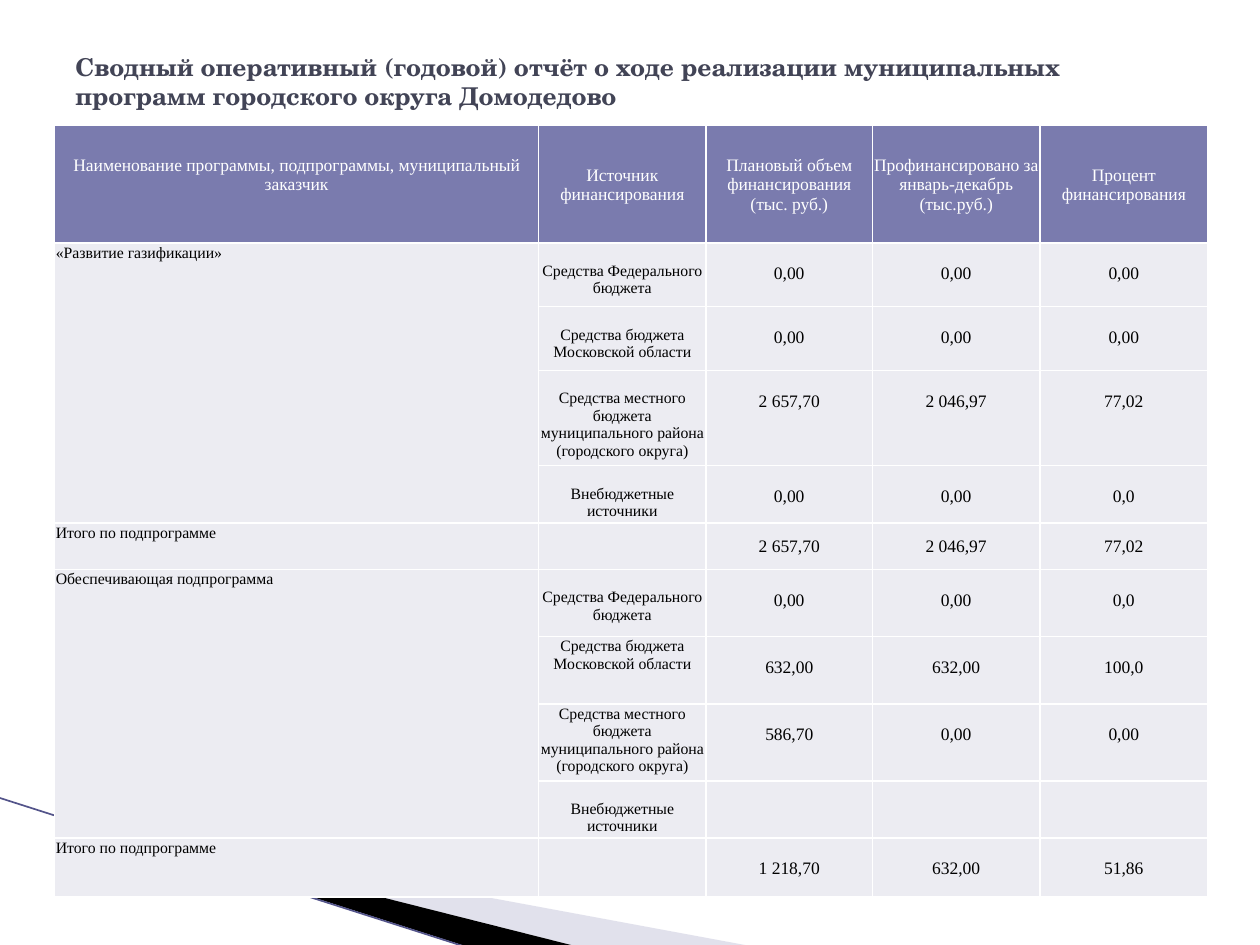
from itertools import product

from lxml.etree import SubElement
from pptx import Presentation
from pptx.dml.color import RGBColor as RGB
from pptx.enum.shapes import MSO_CONNECTOR as CONN
from pptx.enum.text import MSO_ANCHOR as ANCHOR, PP_ALIGN as ALIGN
from pptx.oxml import parse_xml
from pptx.oxml.ns import nsdecls, qn
from pptx.util import Pt

THEME = {
    "head_fill": "7A7BAE", "body_fill": "ECECF2", "border": "FFFFFF",
    "wedge": "B6B6D1", "band": "000000", "line": "53548A",
    "title": dict(name="TeX Gyre Schola", size=14, bold=True, color="424456"),
    "head": dict(name="Times New Roman", size=10, bold=False, color="FFFFFF"),
    "label": dict(name="Times New Roman", size=9, bold=False, color="000000"),
    "value": dict(name="Times New Roman", size=10, bold=False, color="000000"),
}
TITLE = ("Сводный оперативный (годовой) отчёт о ходе реализации "
         "муниципальных программ городского округа Домодедово")
HEADERS = ["Наименование программы, подпрограммы, муниципальный заказчик",
           "Источник финансирования", "Плановый объем финансирования (тыс. руб.)",
           "Профинансировано за январь-декабрь (тыс.руб.)", "Процент финансирования"]
FEDERAL, REGION, LOCAL, EXTRA = SOURCES = [
    "Средства Федерального бюджета", "Средства бюджета Московской области",
    "Средства местного бюджета муниципального района (городского округа)",
    "Внебюджетные источники"]
TOTAL = "Итого по подпрограмме"
PROGRAMMES = [
    dict(name="«Развитие газификации»", top_sources=[],
         values=[("0,00", "0,00", "0,00"), ("0,00", "0,00", "0,00"),
                 ("2 657,70", "2 046,97", "77,02"), ("0,00", "0,00", "0,0")],
         total=("2 657,70", "2 046,97", "77,02"), total_centred=True),
    dict(name="Обеспечивающая подпрограмма", top_sources=[REGION, LOCAL],
         values=[("0,00", "0,00", "0,0"), ("632,00", "632,00", "100,0"),
                 ("586,70", "0,00", "0,00"), ("", "", "")],
         total=("1 218,70", "632,00", "51,86"), total_centred=False),
]
COLS = [276.5, 95.8, 95, 95.8, 95.8]
ROWS = [67, 36.5, 36.5, 36.5, 31.5, 26.6, 38.4, 38.4, 38.4, 26.6, 33.7]
TABLE_LEFT, TABLE_TOP = 31.2, 71.8
INSET, LINE_SPACING = 0.7, 1.15
WEDGE = [(39.6, 468.5), (428.4, 540.5), (328.3, 540.5), (39.6, 468)]
BAND = [(38.2, 467.3), (329, 540.7), (267.8, 541.2), (38.9, 468)]
LINE = (-0.7, 455.8, 267.1, 541.4)


def write(tf, text, style, align=ALIGN.LEFT):
    """Put one styled run in a text frame."""
    p = tf.paragraphs[0]
    p.alignment = align
    r = p.add_run()
    r.text = text
    fmt = dict(THEME[style])
    r.font.color.rgb = RGB.from_string(fmt.pop("color"))
    fmt["size"] = Pt(fmt["size"])
    for key, value in fmt.items():
        setattr(r.font, key, value)


def add_polygon(slide, points, color, alpha=None):
    """Draw a filled outline without a border."""
    (x, y), *rest = [(Pt(a), Pt(b)) for a, b in points]
    builder = slide.shapes.build_freeform(x, y)
    builder.add_line_segments(rest, close=True)
    s = builder.convert_to_shape()
    s.shadow.inherit = False
    s.fill.solid()
    s.fill.fore_color.rgb = RGB.from_string(color)
    s.line.fill.background()
    if alpha:
        clr = s.fill._xPr.find(".//" + qn("a:srgbClr"))
        SubElement(clr, qn("a:alpha"), val=str(alpha * 1000))


def add_decor(slide):
    """Draw the corner decoration."""
    add_polygon(slide, WEDGE, THEME["wedge"], 40)
    add_polygon(slide, BAND, THEME["band"])
    s = slide.shapes.add_connector(CONN.STRAIGHT, *map(Pt, LINE))
    s.line.color.rgb = RGB.from_string(THEME["line"])
    s.line.width = Pt(0.95)
    SubElement(s._element.spPr, qn("a:effectLst"))


def add_title(slide):
    """Add the heading above the table."""
    tf = slide.shapes.add_textbox(Pt(36), Pt(21.6), Pt(648), Pt(49.7)).text_frame
    tf.word_wrap = True
    tf.vertical_anchor = ANCHOR.MIDDLE
    write(tf, TITLE, "title")


def style_cell(cell, fill):
    """Give a cell its fill, insets and borders."""
    cell.fill.solid()
    cell.fill.fore_color.rgb = RGB.from_string(fill)
    insets = dict(margin_left=INSET, margin_right=INSET, margin_top=INSET, margin_bottom=0)
    for key, value in insets.items():
        setattr(cell, key, Pt(value))
    for i, side in enumerate("LRTB"):
        cell._tc.get_or_add_tcPr().insert(i, parse_xml(
            f'<a:ln{side} {nsdecls("a")} w="12700"><a:solidFill>'
            f'<a:srgbClr val="{THEME["border"]}"/></a:solidFill></a:ln{side}>'))


def fill_cell(cell, text, style, align=ALIGN.CENTER, gap=False, anchor=ANCHOR.TOP):
    """Write a cell, lowered by one line when gap is set."""
    cell.vertical_anchor = anchor
    if gap:
        cell.margin_top = Pt(INSET + THEME[style]["size"] * LINE_SPACING)
    if text:
        write(cell.text_frame, text, style, align)


def add_report(slide):
    """Build the financing table."""
    frame = slide.shapes.add_table(len(ROWS), len(COLS), Pt(TABLE_LEFT), Pt(TABLE_TOP),
                                   Pt(sum(COLS)), Pt(sum(ROWS)))
    table = frame.table
    table.horz_banding = False
    for items, sizes, key in ((table.columns, COLS, "width"), (table.rows, ROWS, "height")):
        for item, size in zip(items, sizes):
            setattr(item, key, Pt(size))
    for r, c in product(range(len(ROWS)), range(len(COLS))):
        style_cell(table.cell(r, c), THEME["body_fill" if r else "head_fill"])
    for c, text in enumerate(HEADERS):
        fill_cell(table.cell(0, c), text, "head", anchor=ANCHOR.MIDDLE)
    table.cell(0, 0).margin_bottom = Pt(THEME["head"]["size"] * LINE_SPACING)

    first = 1
    for prog in PROGRAMMES:
        last = first + len(SOURCES)
        table.cell(first, 0).merge(table.cell(last - 1, 0))
        fill_cell(table.cell(first, 0), prog["name"], "label", ALIGN.LEFT)
        for r, (source, values) in enumerate(zip(SOURCES, prog["values"]), first):
            fill_cell(table.cell(r, 1), source, "label", gap=source not in prog["top_sources"])
            for c, value in enumerate(values, 2):
                fill_cell(table.cell(r, c), value, "value", gap=bool(value))
        fill_cell(table.cell(last, 0), TOTAL, "label", ALIGN.LEFT)
        centred = prog["total_centred"]
        for c, value in enumerate(prog["total"], 2):
            fill_cell(table.cell(last, c), value, "value", gap=not centred,
                      anchor=ANCHOR.MIDDLE if centred else ANCHOR.TOP)
        first = last + 1


def main():
    """Build and save the slide."""
    prs = Presentation()
    prs.slide_width, prs.slide_height = Pt(720), Pt(540)
    slide = prs.slides.add_slide(prs.slide_layouts[6])
    add_decor(slide)
    add_title(slide)
    add_report(slide)
    prs.save("out.pptx")


if __name__ == "__main__":
    main()
